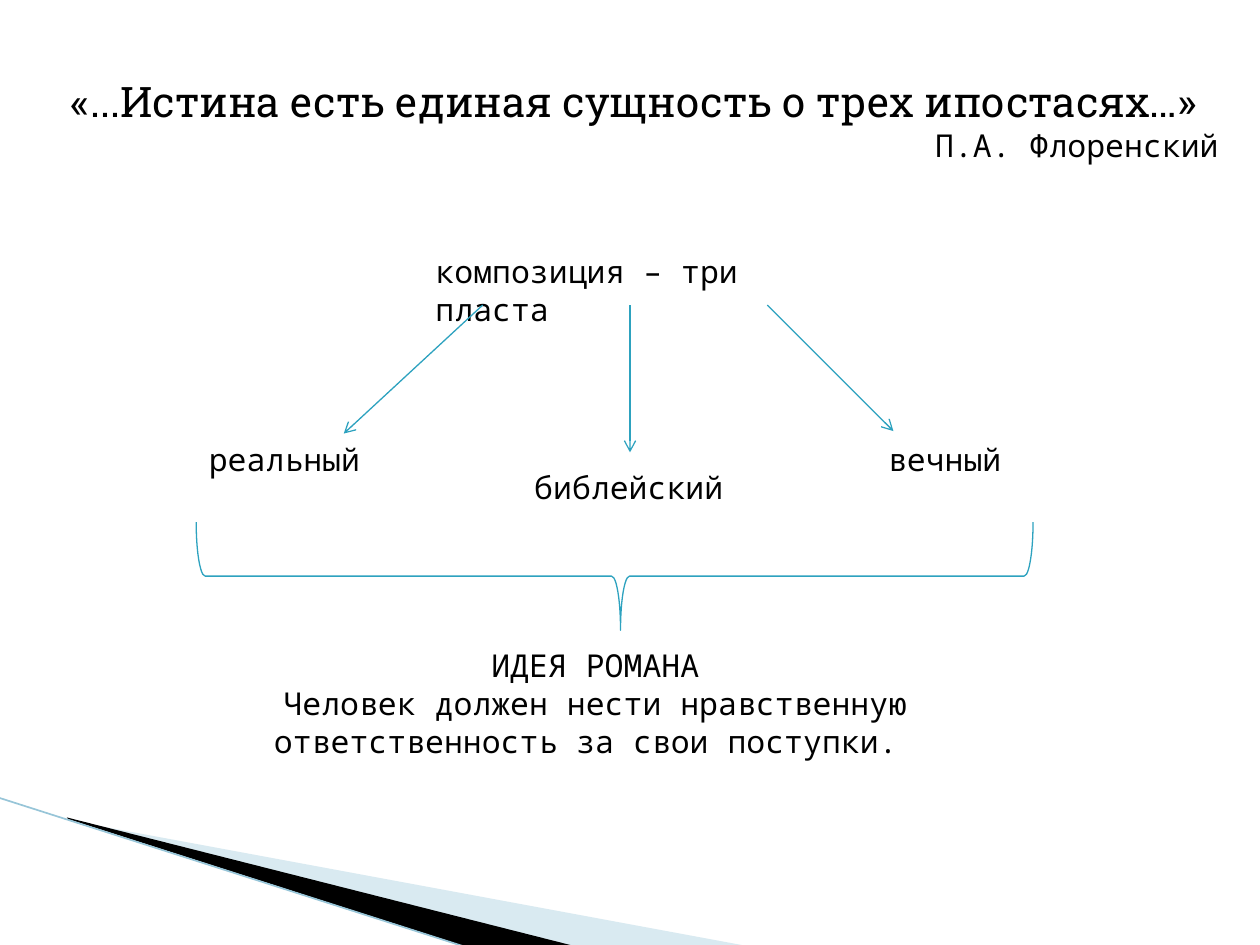
from lxml.etree import SubElement
from pptx import Presentation
from pptx.dml.color import RGBColor
from pptx.enum.shapes import MSO_CONNECTOR, MSO_SHAPE
from pptx.enum.text import MSO_ANCHOR, MSO_AUTO_SIZE, PP_ALIGN
from pptx.oxml.ns import qn
from pptx.util import Cm, Pt

BLACK = RGBColor(0x00, 0x00, 0x00)
TEAL = RGBColor(0x2D, 0xA2, 0xBF)
PALE_TEAL = RGBColor(0xA0, 0xCB, 0xDC)
EDGE_TEAL = RGBColor(0x97, 0xC5, 0xD8)

QUOTE = {"name": "Roboto Slab", "size": Pt(24), "bold": False}
BODY = {"name": "Noto Sans Mono", "size": Pt(18), "bold": False}


class SlideBuilder:
    def __init__(self, slide):
        self.slide = slide
        self.shapes = slide.shapes

    def fill_text(self, box, lines):
        frame = box.text_frame
        settings = {"word_wrap": True, "auto_size": MSO_AUTO_SIZE.NONE,
                    "vertical_anchor": MSO_ANCHOR.TOP}
        for key, value in settings.items():
            setattr(frame, key, value)
        for index, (words, style, alignment) in enumerate(lines):
            paragraph = frame.add_paragraph() if index else frame.paragraphs[0]
            paragraph.alignment = alignment
            run = paragraph.add_run()
            run.text = words
            for key, value in style.items():
                setattr(run.font, key, value)
            run.font.color.rgb = BLACK

    def title(self, left, top, width, height, lines):
        heading = self.shapes.title
        place = {"left": left, "top": top, "width": width, "height": height}
        for key, value in place.items():
            setattr(heading, key, Cm(value))
        heading.text_frame.margin_left = Cm(0.44)
        self.fill_text(heading, lines)

    def text(self, left, top, width, height, *lines, alignment=PP_ALIGN.LEFT):
        box = self.shapes.add_textbox(Cm(left), Cm(top), Cm(width), Cm(height))
        self.fill_text(box, [(words, BODY, alignment) for words in lines])

    def line(self, start, end, color=TEAL, weight=0.75, arrow=False):
        connector = self.shapes.add_connector(
            MSO_CONNECTOR.STRAIGHT, *(Cm(value) for value in start + end))
        connector.line.color.rgb = color
        connector.line.width = Pt(weight)
        if arrow:
            SubElement(connector.line._get_or_add_ln(), qn("a:tailEnd"), type="arrow")
        SubElement(connector._element.spPr, qn("a:effectLst"))

    def wedge(self, points, color, opacity=100):
        first, *rest = [(Cm(x), Cm(y)) for x, y in points]
        builder = self.shapes.build_freeform(*first)
        builder.add_line_segments(rest, close=True)
        shape = builder.convert_to_shape()
        shape.shadow.inherit = False
        shape.fill.solid()
        shape.fill.fore_color.rgb = color
        shape.line.fill.background()
        if opacity < 100:
            tint = shape._element.spPr.find(".//" + qn("a:srgbClr"))
            SubElement(tint, qn("a:alpha"), val=str(opacity * 1000))

    def brace(self, left, top, width, height):
        shape = self.shapes.add_shape(
            MSO_SHAPE.RIGHT_BRACE, Cm(left), Cm(top), Cm(width), Cm(height))
        shape.rotation = 90
        shape.adjustments[0] = 0.083
        shape.adjustments[1] = 0.493
        shape.shadow.inherit = False
        shape.fill.background()
        shape.line.color.rgb = TEAL
        shape.line.width = Pt(0.75)


def main():
    deck = Presentation()
    deck.slide_width, deck.slide_height = Cm(25.4), Cm(19.05)
    builder = SlideBuilder(deck.slides.add_slide(deck.slide_layouts[5]))

    builder.wedge([(1.4, 16.54), (15.11, 19.08), (11.58, 19.08), (1.4, 16.51)],
                  PALE_TEAL, opacity=40)
    builder.wedge([(1.35, 16.48), (11.61, 19.08), (9.45, 19.1), (1.37, 16.51)], BLACK)
    builder.line((-0.03, 16.08), (9.42, 19.1), EDGE_TEAL, 0.95)

    builder.title(0.99, 1.4, 23.83, 2.06, [
        ("«...Истина есть единая сущность о трех ипостасях…»", QUOTE, PP_ALIGN.LEFT),
        ("П.А. Флоренский", BODY, PP_ALIGN.RIGHT)])

    builder.text(8.53, 4.95, 8.74, 1.02, "композиция – три пласта")
    arrow_top = 6.15
    layers = [
        ("реальный", (3.96, 8.74, 5.56), 9.73, (6.93, 8.74)),
        ("библейский", (10.52, 9.32, 4.37), 12.7, (12.7, 9.12)),
        ("вечный", (17.65, 8.74, 4.95), 15.47, (18.01, 8.69))]
    for layer, place, arrow_start, arrow_end in layers:
        builder.line((arrow_start, arrow_top), arrow_end, arrow=True)
        builder.text(*place, 1.02, layer)

    builder.brace(11.3, 3.18, 2.18, 16.87)
    builder.text(2.97, 12.9, 18.06, 3.33, "ИДЕЯ РОМАНА",
                 "Человек должен нести нравственную ответственность за свои поступки. ",
                 alignment=PP_ALIGN.CENTER)
    deck.save("out.pptx")


if __name__ == "__main__":
    main()
